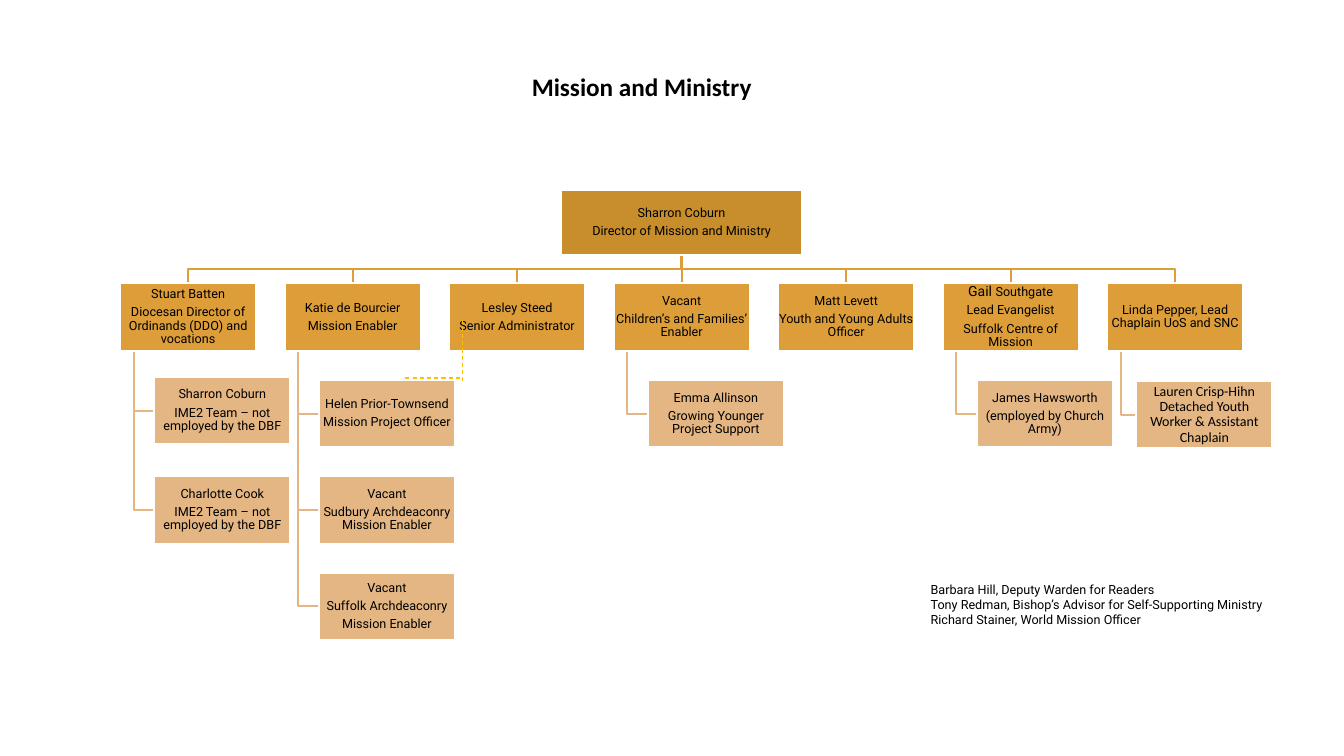
import dataclasses

import lxml.etree
import pptx
import pptx.dml.color
import pptx.enum.dml
import pptx.enum.shapes
import pptx.enum.text
import pptx.oxml.ns
import pptx.util

HEADING = "Mission and Ministry"
DIRECTOR = ["Sharron Coburn", "Director of Mission and Ministry"]
IME2_ROLE = "IME2 Team – not employed by the DBF"

REPORTS = [
    {"lines": ["Stuart Batten", "Diocesan Director of Ordinands (DDO) and vocations"],
     "team": [["Sharron Coburn", IME2_ROLE], ["Charlotte Cook", IME2_ROLE]],
     "drops": [-0.03, 0]},
    {"lines": ["Katie de Bourcier", "Mission Enabler"],
     "team": [["Helen Prior-Townsend", "Mission Project Officer"],
              ["Vacant", "Sudbury Archdeaconry Mission Enabler"],
              ["Vacant", "Suffolk Archdeaconry", "Mission Enabler"]]},
    {"lines": ["Lesley Steed", "Senior Administrator"]},
    {"lines": ["Vacant", "Children’s and Families’ Enabler"],
     "team": [["Emma Allinson", "Growing Younger Project Support"]]},
    {"lines": ["Matt Levett", "Youth and Young Adults Officer"]},
    {"lines": [("Gail ", "Southgate"), "Lead Evangelist", "Suffolk Centre of Mission"],
     "team": [["James Hawsworth", "(employed by Church Army)"]]},
    {"lines": ["Linda Pepper, Lead Chaplain UoS and SNC"],
     "team": [["Lauren Crisp-Hihn Detached Youth Worker & Assistant Chaplain"]],
     "drops": [0.01], "indent": 0.29, "font": "Calibri", "size": 10},
]
ADVISORS = [
    "Barbara Hill, Deputy Warden for Readers",
    "Tony Redman, Bishop’s Advisor for Self-Supporting Ministry",
    "Richard Stainer, World Mission Officer",
]


@dataclasses.dataclass(frozen=True)
class Theme:
    director: str = "C98E2C"
    report: str = "DD9E39"
    member: str = "E4B683"
    support: str = "FFC000"
    outline: str = "FFFFFF"
    ink: str = "000000"
    body_font: str = "Roboto"
    heading_font: str = "Calibri"
    body_size: float = 9
    large_size: float = 10
    heading_size: float = 18
    branch_width: float = 1.5
    support_width: float = 0.75


THEME = Theme()
SLIDE_W, SLIDE_H = 13.33, 7.5
BOX_W, BOX_H = 1.35, 0.67
FIRST_COLUMN, LAST_COLUMN = 1.19, 10.98
COLUMN_STEP = (LAST_COLUMN - FIRST_COLUMN) / (len(REPORTS) - 1)
REPORT_TOP = 2.81
MEMBER_TOP, MEMBER_STEP = 3.77, 0.955
MEMBER_INDENT, TRUNK_INDENT = 0.34, 0.135
DIRECTOR_BOX = (5.56, 1.88, 2.4, 0.65)
HEADING_BOX = (2.88, 0.66, 6.97, 0.41)
ADVISORS_BOX = (9.13, 5.72, 3.7, 0.71)
SUPPORT_LINES = [(4.59, 3.17, 4.59, 3.78), (4.02, 3.75, 4.59, 3.75)]

inch = pptx.util.Inches
align = pptx.enum.text.PP_ALIGN
anchor = pptx.enum.text.MSO_ANCHOR


def rgb(colour):
    return pptx.dml.color.RGBColor.from_string(colour)


def style_runs(paragraph, font, size, bold=False):
    for run in paragraph.runs:
        run.font.name = font
        run.font.size = pptx.util.Pt(size)
        run.font.bold = bold
        run.font.color.rgb = rgb(THEME.ink)


def place(part, box):
    part.left, part.top, part.width, part.height = map(inch, box)


def style_line(part, colour, width):
    part.line.color.rgb = rgb(colour)
    part.line.width = pptx.util.Pt(width)


def add_post(slide, box, lines, colour, font=THEME.body_font, size=THEME.body_size):
    post = slide.shapes.add_shape(
        pptx.enum.shapes.MSO_SHAPE.RECTANGLE, *map(inch, box))
    post.shadow.inherit = False
    post.fill.solid()
    post.fill.fore_color.rgb = rgb(colour)
    style_line(post, THEME.outline, THEME.branch_width)
    frame = post.text_frame
    frame.word_wrap = True
    frame.vertical_anchor = anchor.MIDDLE
    frame.margin_left = frame.margin_right = inch(0.01)
    frame.margin_top = frame.margin_bottom = inch(0.01)
    for index, line in enumerate(lines):
        paragraph = frame.add_paragraph() if index else frame.paragraphs[0]
        pieces = line if isinstance(line, tuple) else (line,)
        for piece in pieces:
            paragraph.add_run().text = piece
        paragraph.alignment = align.CENTER
        paragraph.line_spacing = 0.9
        paragraph.space_after = pptx.util.Pt(size * 0.35)
        style_runs(paragraph, font, size)
        if len(pieces) > 1:
            paragraph.runs[0].font.size = pptx.util.Pt(THEME.large_size)
    return post


def send_to_back(slide, part):
    slide.shapes._spTree.insert(2, part._element)


def add_branch(slide, points, colour):
    corners = [(inch(x), inch(y)) for x, y in points]
    builder = slide.shapes.build_freeform(*corners[0], scale=1.0)
    builder.add_line_segments(corners[1:], close=False)
    branch = builder.convert_to_shape()
    branch.shadow.inherit = False
    branch.fill.background()
    style_line(branch, colour, THEME.branch_width)
    send_to_back(slide, branch)


def add_straight(slide, ends, colour, width):
    straight = slide.shapes.add_connector(
        pptx.enum.shapes.MSO_CONNECTOR.STRAIGHT, *map(inch, ends))
    style_line(straight, colour, width)
    lxml.etree.SubElement(
        straight._element.spPr, pptx.oxml.ns.qn("a:effectLst"))
    return straight


def add_team(slide, report, left):
    trunk = left + TRUNK_INDENT
    member_left = left + report.get("indent", MEMBER_INDENT)
    drops = report.get("drops", [0] * len(report.get("team", [])))
    for row, (lines, drop) in enumerate(zip(report.get("team", []), drops)):
        top = MEMBER_TOP + row * MEMBER_STEP + drop
        middle = top + BOX_H / 2
        add_post(slide, (member_left, top, BOX_W, BOX_H), lines, THEME.member,
                 report.get("font", THEME.body_font),
                 report.get("size", THEME.body_size))
        add_branch(slide, [(trunk, REPORT_TOP + BOX_H), (trunk, middle),
                           (member_left, middle)], THEME.member)


def add_chart_of_posts(slide):
    left, top, width, height = DIRECTOR_BOX
    centre, bottom = left + width / 2, top + height
    rail = (bottom + REPORT_TOP) / 2
    director = add_post(slide, DIRECTOR_BOX, DIRECTOR, THEME.director)
    for column, report in enumerate(REPORTS):
        report_left = FIRST_COLUMN + column * COLUMN_STEP
        report_centre = report_left + BOX_W / 2
        post = add_post(slide, (report_left, REPORT_TOP, BOX_W, BOX_H),
                        report["lines"], THEME.report)
        if column == len(REPORTS) // 2:
            stem = add_straight(slide, (centre, bottom, centre, REPORT_TOP),
                                THEME.report, THEME.branch_width)
            stem.begin_connect(director, 2)
            stem.end_connect(post, 0)
            send_to_back(slide, stem)
        else:
            add_branch(slide, [(centre, bottom), (centre, rail),
                               (report_centre, rail),
                               (report_centre, REPORT_TOP)], THEME.report)
        add_team(slide, report, report_left)


def fill_placeholder(holder, box, text, alignment, font, size, bold=False):
    place(holder, box)
    frame = holder.text_frame
    frame.text = text
    frame.word_wrap = True
    frame.auto_size = pptx.enum.text.MSO_AUTO_SIZE.NONE
    frame.vertical_anchor = anchor.TOP
    for paragraph in frame.paragraphs:
        properties = paragraph._p.get_or_add_pPr()
        properties.set("marL", "0")
        properties.set("indent", "0")
        lxml.etree.SubElement(properties, pptx.oxml.ns.qn("a:buNone"))
        paragraph.alignment = alignment
        paragraph.space_before = pptx.util.Pt(0)
        style_runs(paragraph, font, size, bold)


def main():
    deck = pptx.Presentation()
    deck.slide_width, deck.slide_height = inch(SLIDE_W), inch(SLIDE_H)
    slide = deck.slides.add_slide(deck.slide_layouts[1])
    fill_placeholder(slide.shapes.title, HEADING_BOX, HEADING, align.CENTER,
                     THEME.heading_font, THEME.heading_size, True)
    fill_placeholder(slide.placeholders[1], ADVISORS_BOX, "\n".join(ADVISORS),
                     align.LEFT, THEME.body_font, THEME.body_size)
    add_chart_of_posts(slide)
    for ends in SUPPORT_LINES:
        support = add_straight(slide, ends, THEME.support, THEME.support_width)
        support.line.dash_style = pptx.enum.dml.MSO_LINE.DASH
    deck.save("out.pptx")


if __name__ == "__main__":
    main()
